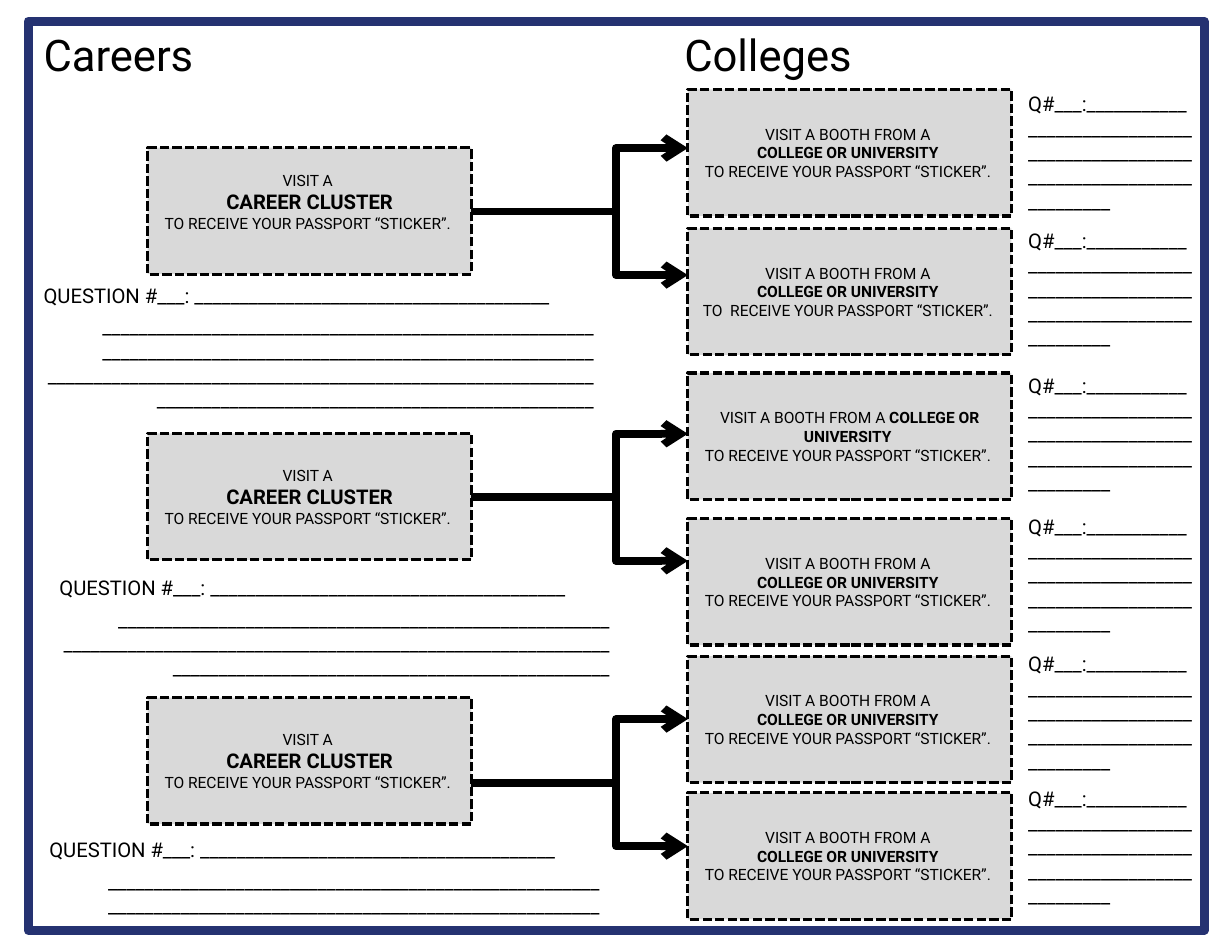
from lxml import etree
from pptx import Presentation, util as u
from pptx.dml.color import RGBColor
from pptx.enum import dml, shapes, text
from pptx.oxml.ns import qn

BLACK, GREY, NAVY = "000000", "D9D9D9", "253271"
FONT = "Roboto"
BODY, LARGE = 10, 13
BOX_W, BOX_H = 7.34, 2.87
CAREER_X, COLLEGE_X, NOTE_X = 3.35, 15.6, 23.04
JOIN_X, ARM = 13.97, 1.44

# Text, left, width
HEADINGS = [("Careers", 0.71, 12.55), ("Colleges", 15.24, 12.24)]

STICKER = "TO RECEIVE YOUR PASSPORT “STICKER”. "
# A paragraph is a list of runs: text, size, bold
CAREER_TEXT = [
    [("VISIT A ", BODY, False)],
    [("CAREER CLUSTER", LARGE, True)],
    [(STICKER, BODY, False)],
]
VISIT = ("VISIT A BOOTH FROM A ", BODY, False)
COLLEGE = ("COLLEGE OR UNIVERSITY ", BODY, True)
COLLEGE_TEXT = [[VISIT], [COLLEGE], [(STICKER, BODY, False)]]
COLLEGE_SPACED = [[VISIT], [COLLEGE], [(STICKER.replace("TO ", "TO  "), BODY, False)]]
COLLEGE_JOINED = [[VISIT, COLLEGE], [(STICKER, BODY, False)]]

# Box top, bottom inset, height of the branch line
CAREERS = [(3.35, 0.57, 4.8), (9.83, 0.15, 11.28), (15.82, 0.15, 17.75)]

# Box top, note top, box text
COLLEGES = [
    (2.03, 1.93, COLLEGE_TEXT),
    (5.18, 5.03, COLLEGE_SPACED),
    (8.46, 8.31, COLLEGE_JOINED),
    (11.76, 11.51, COLLEGE_TEXT),
    (14.88, 14.63, COLLEGE_TEXT),
    (17.98, 17.68, COLLEGE_TEXT),
]
NOTE = "Q#___:" + "_" * 74

# Left, top, height, length of each answer rule
QUESTIONS = [
    (0.71, 6.27, 3.23, (54, 54, 108)),
    (1.07, 12.9, 2.69, (54, 108)),
    (0.84, 18.85, 2.13, (54, 54)),
]
QUESTION = "QUESTION #___: " + "_" * 39

prs = Presentation()
prs.slide_width, prs.slide_height = u.Cm(27.94), u.Cm(21.59)
s = prs.slides.add_slide(prs.slide_layouts[6])


def rgb(color):
    return RGBColor.from_string(color)


def set_frame(tf, anchor=text.MSO_ANCHOR.TOP, bottom=0.15):
    tf.word_wrap = True
    tf.vertical_anchor = anchor
    tf.margin_left = tf.margin_right = u.Cm(0.28)
    tf.margin_top, tf.margin_bottom = u.Cm(0.15), u.Cm(bottom)


def add_run(p, content, size=LARGE, bold=False, color=BLACK):
    r = p.add_run()
    r.text = content
    r.font.name, r.font.size, r.font.bold = FONT, u.Pt(size), bold
    r.font.color.rgb = rgb(color)


def add_text(content, x, y, w, h, size=LARGE):
    tf = s.shapes.add_textbox(*map(u.Cm, (x, y, w, h))).text_frame
    set_frame(tf)
    add_run(tf.paragraphs[0], content, size)
    return tf


def add_rect(x, y, w, h, line, width, fill=None):
    sp = s.shapes.add_shape(shapes.MSO_SHAPE.RECTANGLE, *map(u.Cm, (x, y, w, h)))
    sp.shadow.inherit = False
    if fill:
        sp.fill.solid()
        sp.fill.fore_color.rgb = rgb(fill)
    else:
        sp.fill.background()
    sp.line.color.rgb = rgb(line)
    sp.line.width = u.Pt(width)
    return sp


def add_sticker_box(paragraphs, x, y, bottom=0.15):
    sp = add_rect(x, y, BOX_W, BOX_H, BLACK, 2, GREY)
    sp.line.dash_style = dml.MSO_LINE.SQUARE_DOT
    tf = sp.text_frame
    set_frame(tf, text.MSO_ANCHOR.MIDDLE, bottom)
    for i, runs in enumerate(paragraphs):
        p = tf.add_paragraph() if i else tf.paragraphs[0]
        p.alignment = text.PP_ALIGN.CENTER
        for run in runs:
            add_run(p, *run)


def add_branch(x, y, end_y):
    """Elbow arrow that turns at JOIN_X and ends at a college box."""
    c = s.shapes.add_connector(shapes.MSO_CONNECTOR.ELBOW,
                               *map(u.Cm, (x, y, COLLEGE_X, end_y)))
    c.line.color.rgb = rgb(BLACK)
    c.line.width = u.Pt(5)
    etree.SubElement(c.line._get_or_add_ln(), qn("a:tailEnd"), type="arrow")
    sppr = c._element.spPr
    etree.SubElement(sppr, qn("a:effectLst"))
    turn = round((JOIN_X - x) / (COLLEGE_X - x) * 100000)
    guides = sppr.find(qn("a:prstGeom")).find(qn("a:avLst"))
    etree.SubElement(guides, qn("a:gd"), name="adj1", fmla=f"val {turn}")


add_rect(0.64, 0.48, 26.67, 20.62, NAVY, 5.75)
for title, x, w in HEADINGS:
    add_text(title, x, 0.48, w, 1.47, size=28)

for y, bottom, _ in CAREERS:
    add_sticker_box(CAREER_TEXT, CAREER_X, y, bottom)

for y, note_y, paragraphs in COLLEGES:
    add_sticker_box(paragraphs, COLLEGE_X, y)
    add_text(NOTE, NOTE_X, note_y, 4.32, 3.07)

for _, _, y in CAREERS:
    add_branch(11.4, y, y - ARM)
    add_branch(CAREER_X + BOX_W, y, y + ARM)

for x, y, h, rules in QUESTIONS:
    tf = add_text(QUESTION, x, y, 13.03, h)
    for i, length in enumerate(rules):
        p = tf.add_paragraph()
        p.alignment = text.PP_ALIGN.RIGHT
        if i == 0:
            p.space_before = u.Pt(4.7)
        add_run(p, "_" * length)

prs.save("out.pptx")
